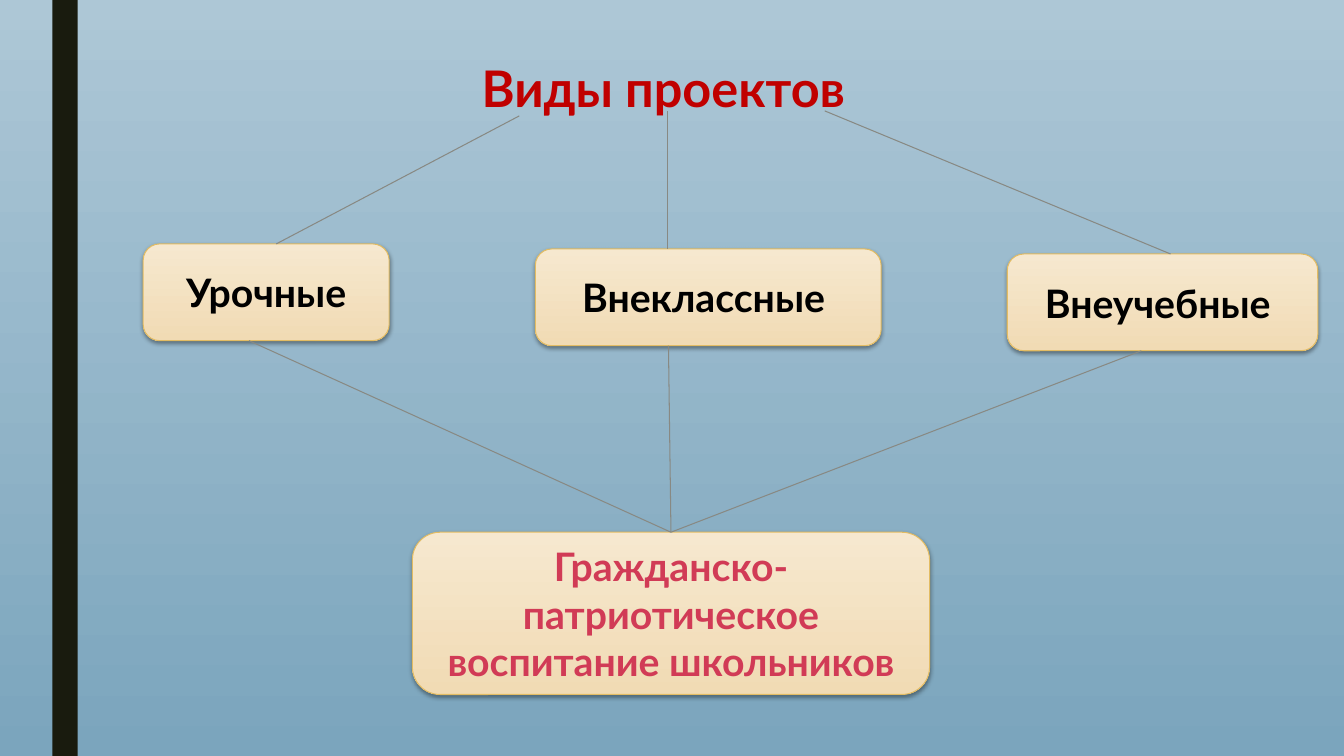
from lxml import etree
from pptx import Presentation
from pptx import util as u
from pptx.dml.color import RGBColor
from pptx.enum import shapes, text
from pptx.oxml import parse_xml
from pptx.oxml.ns import nsdecls, qn

COLORS = {
    "sky_low": "7BA5BD", "sky_high": "ADC7D6", "stripe": "191B0E",
    "box_top": "F6E8CF", "box_bottom": "F1DBB4", "box_line": "E3BC63",
    "link": "888983", "title": "C00000", "kind": "000000", "goal": "D13B56",
}
C = {name: RGBColor.from_string(value) for name, value in COLORS.items()}
SHADOW = (
    f'<a:effectLst {nsdecls("a")}><a:outerShdw blurRad="39400" dist="20300" '
    'dir="5400000" rotWithShape="0"><a:srgbClr val="000000">'
    '<a:alpha val="38000"/></a:srgbClr></a:outerShdw></a:effectLst>'
)


def set_gradient(fill, start, end, angle):
    fill.gradient()
    fill.gradient_angle = angle
    for stop, color in zip(fill.gradient_stops, (start, end)):
        stop.color.rgb = C[color]


def write(sp, words, size, color, anchor):
    tf = sp.text_frame
    frame = {"word_wrap": True, "vertical_anchor": anchor,
             "margin_left": u.Inches(0.1), "margin_right": u.Inches(0.1),
             "margin_top": u.Inches(0.05), "margin_bottom": u.Inches(0.05)}
    for name, value in frame.items():
        setattr(tf, name, value)
    p = tf.paragraphs[0]
    p.alignment = text.PP_ALIGN.CENTER
    r = p.add_run()
    r.text = words
    for name, value in {"name": "Lato", "size": u.Pt(size), "bold": True}.items():
        setattr(r.font, name, value)
    r.font.color.rgb = C[color]
    return p


prs = Presentation()
prs.slide_width, prs.slide_height = u.Inches(13.33), u.Inches(7.5)
s = prs.slides.add_slide(prs.slide_layouts[6])
set_gradient(s.background.fill, "sky_low", "sky_high", 90)

stripe = s.shapes.add_shape(shapes.MSO_SHAPE.RECTANGLE, u.Inches(0.52), 0,
                            u.Inches(0.25), prs.slide_height)
stripe.shadow.inherit = False
stripe.fill.solid()
stripe.fill.fore_color.rgb = C["stripe"]
stripe.line.fill.background()

title = s.shapes.add_textbox(*map(u.Inches, (1.33, 0.57, 10.5, 6.03)))
p = write(title, "Виды проектов", 36, "title", text.MSO_ANCHOR.TOP)
for name, value in {"line_spacing": 0.94, "space_before": u.Pt(10),
                    "space_after": u.Pt(2)}.items():
    setattr(p, name, value)

boxes = [
    ("Урочные", (1.42, 2.42, 2.44, 0.96), "kind"),
    ("Внеклассные ", (5.31, 2.47, 3.43, 0.96), "kind"),
    ("Внеучебные ", (9.99, 2.52, 3.08, 0.96), "kind"),
    ("Гражданско-патриотическое воспитание школьников",
     (4.09, 5.28, 5.13, 1.61), "goal"),
]
for words, place, color in boxes:
    sp = s.shapes.add_shape(shapes.MSO_SHAPE.ROUNDED_RECTANGLE,
                            *map(u.Inches, place))
    sp.adjustments[0] = 0.17
    set_gradient(sp.fill, "box_top", "box_bottom", 270)
    sp.line.color.rgb = C["box_line"]
    sp.line.width = u.Pt(0.75)
    sp._element.spPr.append(parse_xml(SHADOW))
    write(sp, words, 28, color, text.MSO_ANCHOR.MIDDLE)
goal = sp

links = [
    ((5.15, 1.15), (2.74, 2.42), None),
    ((6.62, 1.1), (6.62, 2.47), None),
    ((8.18, 1.1), (11.61, 2.52), None),
    ((2.47, 3.38), (6.66, 5.28), goal),
    ((6.63, 3.43), (6.66, 5.28), goal),
    ((11.32, 3.48), (6.66, 5.28), goal),
]
for start, end, target in links:
    link = s.shapes.add_connector(shapes.MSO_CONNECTOR.STRAIGHT,
                                  *map(u.Inches, start + end))
    link.line.color.rgb = C["link"]
    link.line.width = u.Pt(0.75)
    etree.SubElement(link._element.spPr, qn("a:effectLst"))
    if target is not None:
        link.end_connect(target, 0)

prs.save("out.pptx")
